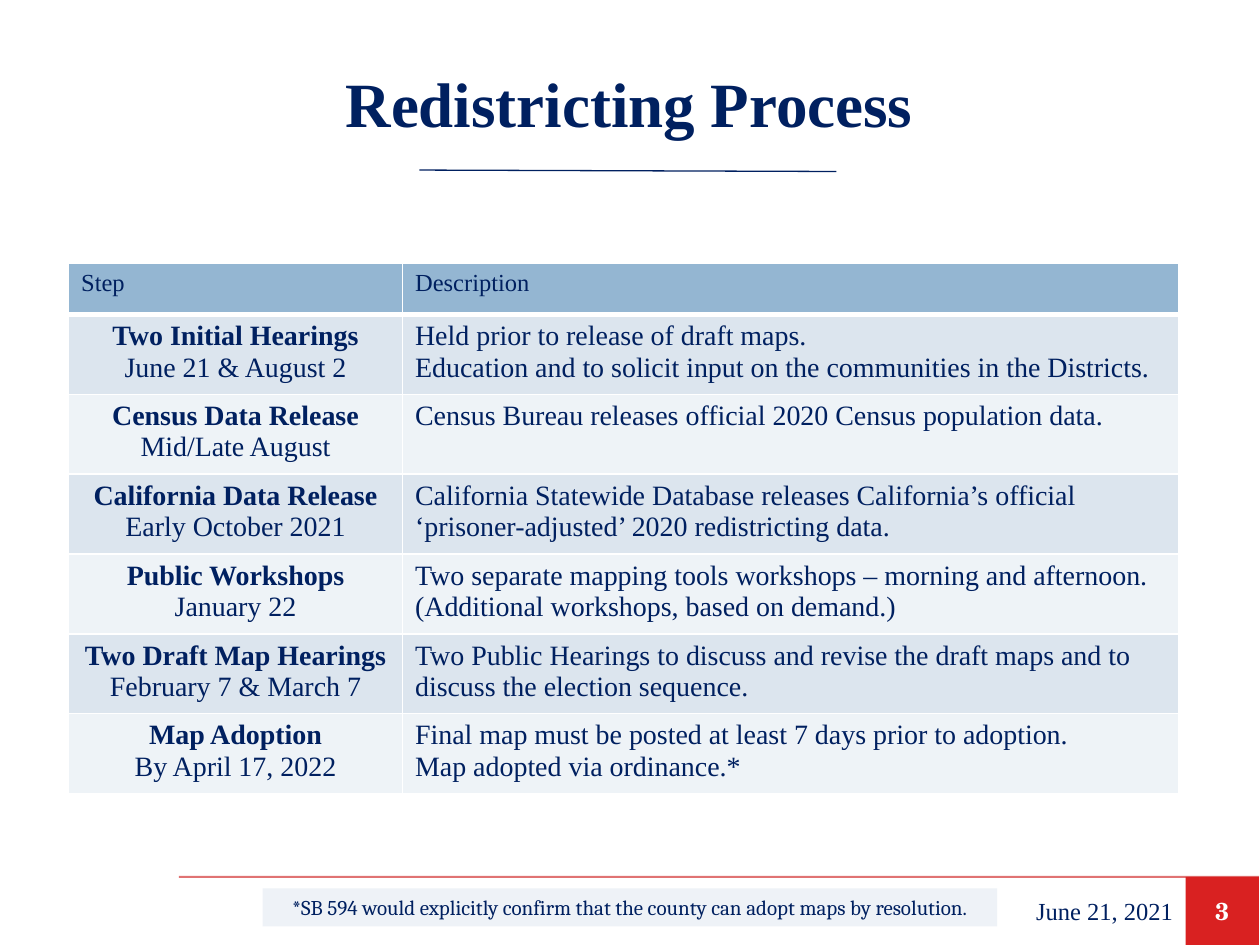
from lxml.etree import SubElement
from pptx import Presentation
from pptx.dml.color import RGBColor
from pptx.enum.shapes import MSO_CONNECTOR, MSO_SHAPE
from pptx.enum.text import MSO_ANCHOR, PP_ALIGN
from pptx.oxml.ns import qn
from pptx.util import Pt

NAVY = RGBColor(0x00, 0x20, 0x60)
RED = RGBColor(0xD9, 0x21, 0x21)
RULE = RGBColor(0xC8, 0x00, 0x00)
WHITE = RGBColor(0xFF, 0xFF, 0xFF)
HEAD = RGBColor(0x94, 0xB6, 0xD2)
BANDS = (RGBColor(0xDC, 0xE5, 0xEE), RGBColor(0xEE, 0xF3, 0xF7))
NOTE = RGBColor(0xEE, 0xF2, 0xF7)
SERIF = "Times New Roman"

STEPS = [
    (["Two Initial Hearings", "June 21 & August 2"],
     ["Held prior to release of draft maps.",
      "Education and to solicit input on the communities in the Districts."]),
    (["Census Data Release", "Mid/Late August"],
     ["Census Bureau releases official 2020 Census population data."]),
    (["California Data Release", "Early October 2021"],
     ["California Statewide Database releases California’s official "
      "‘prisoner-adjusted’ 2020 redistricting data."]),
    (["Public Workshops", "January 22"],
     ["Two separate mapping tools workshops – morning and afternoon.",
      "(Additional workshops, based on demand.)"]),
    (["Two Draft Map Hearings", "February 7 & March 7"],
     ["Two Public Hearings to discuss and revise the draft maps and to "
      "discuss the election sequence."]),
    (["Map Adoption", "By April 17, 2022"],
     ["Final map must be posted at least 7 days prior to adoption.",
      "Map adopted via ordinance.*"]),
]


def write(frame, lines, size, align=PP_ALIGN.LEFT, bold=False, color=NAVY,
          face=SERIF, lead=False):
    """Write one paragraph per line; lead makes the first one bold."""
    frame.word_wrap = True
    for i, line in enumerate(lines):
        para = frame.add_paragraph() if i else frame.paragraphs[0]
        para.text = line
        para.alignment = align
        font = para.font
        font.name, font.size = face, Pt(size)
        font.bold = bold or (lead and i == 0)
        font.color.rgb = color


def add_text(slide, box, text, size, anchor=MSO_ANCHOR.MIDDLE, fill=None, **style):
    """Add a line of text, on a filled rectangle if a fill is given."""
    area = [Pt(v) for v in box]
    if fill is None:
        shape = slide.shapes.add_textbox(*area)
    else:
        shape = slide.shapes.add_shape(MSO_SHAPE.RECTANGLE, *area)
        shape.shadow.inherit = False
        shape.fill.solid()
        shape.fill.fore_color.rgb = fill
        shape.line.fill.background()
    shape.text_frame.vertical_anchor = anchor
    write(shape.text_frame, [text], size, **style)


def add_rule(slide, start, end, color, width, alpha=None):
    line = slide.shapes.add_connector(
        MSO_CONNECTOR.STRAIGHT, *[Pt(v) for v in (*start, *end)])
    line.line.color.rgb = color
    line.line.width = Pt(width)
    props = line._element.spPr
    if alpha:
        tint = props.find(".//" + qn("a:srgbClr"))
        SubElement(tint, qn("a:alpha"), val=str(alpha * 1000))
    SubElement(props, qn("a:effectLst"))


def add_title(slide, x, y, w, h):
    add_text(slide, (x, y, w, h), "Redistricting Process", 36,
             align=PP_ALIGN.CENTER, bold=True)
    # Short rule below the title
    add_rule(slide, (x + 213.1, y + h), (x + 451.4, y + h + 0.8), NAVY, 0.75)


def set_cell(cell, fill, foot):
    """Give a cell white borders and a fill."""
    props = cell._tc.get_or_add_tcPr()
    for side, width in (("L", 1), ("R", 1), ("T", 1), ("B", foot)):
        edge = SubElement(props, qn("a:ln" + side), w=str(Pt(width)))
        paint = SubElement(edge, qn("a:solidFill"))
        SubElement(paint, qn("a:srgbClr"), val=str(WHITE))
    cell.fill.solid()
    cell.fill.fore_color.rgb = fill


def add_steps(slide, x, y, w, h):
    count = len(STEPS) + 1
    table = slide.shapes.add_table(count, 2, Pt(x), Pt(y), Pt(w), Pt(h)).table
    table.horz_banding = False
    first, top = 190.8, 29.3
    table.columns[0].width, table.columns[1].width = Pt(first), Pt(w - first)
    for i, row in enumerate(table.rows):
        row.height = Pt(top if i == 0 else (h - top) / len(STEPS))

    # Header row
    for cell, name in zip(table.rows[0].cells, ("Step", "Description")):
        write(cell.text_frame, [name], 14)
        set_cell(cell, HEAD, 3)

    # One banded row for each step
    for i, (step, about) in enumerate(STEPS):
        left, right = table.rows[i + 1].cells
        write(left.text_frame, step, 16, align=PP_ALIGN.CENTER, lead=True)
        write(right.text_frame, about, 16)
        for cell in (left, right):
            set_cell(cell, BANDS[i % 2], 1)


def add_footer(slide, x, y, w, h):
    add_rule(slide, (x, y), (x + w, y), RULE, 1.25, alpha=55)
    # Page number, date and footnote, from right to left
    page, date = 41.8, 125.3
    edge = x + w - page
    add_text(slide, (edge, y, page, h), "3", 14, fill=RED, color=WHITE,
             align=PP_ALIGN.CENTER, bold=True, face="TeX Gyre Schola")
    add_text(slide, (edge - date, y, date, h), "June 21, 2021", 14,
             align=PP_ALIGN.RIGHT)
    add_text(slide, (x + 47.9, y + 6.5, 419.8, 21.8),
             "*SB 594 would explicitly confirm that the county can adopt "
             "maps by resolution.", 12, anchor=MSO_ANCHOR.TOP, fill=NOTE,
             align=PP_ALIGN.CENTER, face="Cambria")


def main():
    deck = Presentation()
    deck.slide_width, deck.slide_height = Pt(720), Pt(540)
    slide = deck.slides.add_slide(deck.slide_layouts[6])
    add_title(slide, 26.6, 19.4, 666, 77.8)
    add_steps(slide, 39.2, 150.5, 634.3, 303)
    add_footer(slide, 102.2, 501.1, 617.1, 38.9)
    deck.save("out.pptx")


if __name__ == "__main__":
    main()
